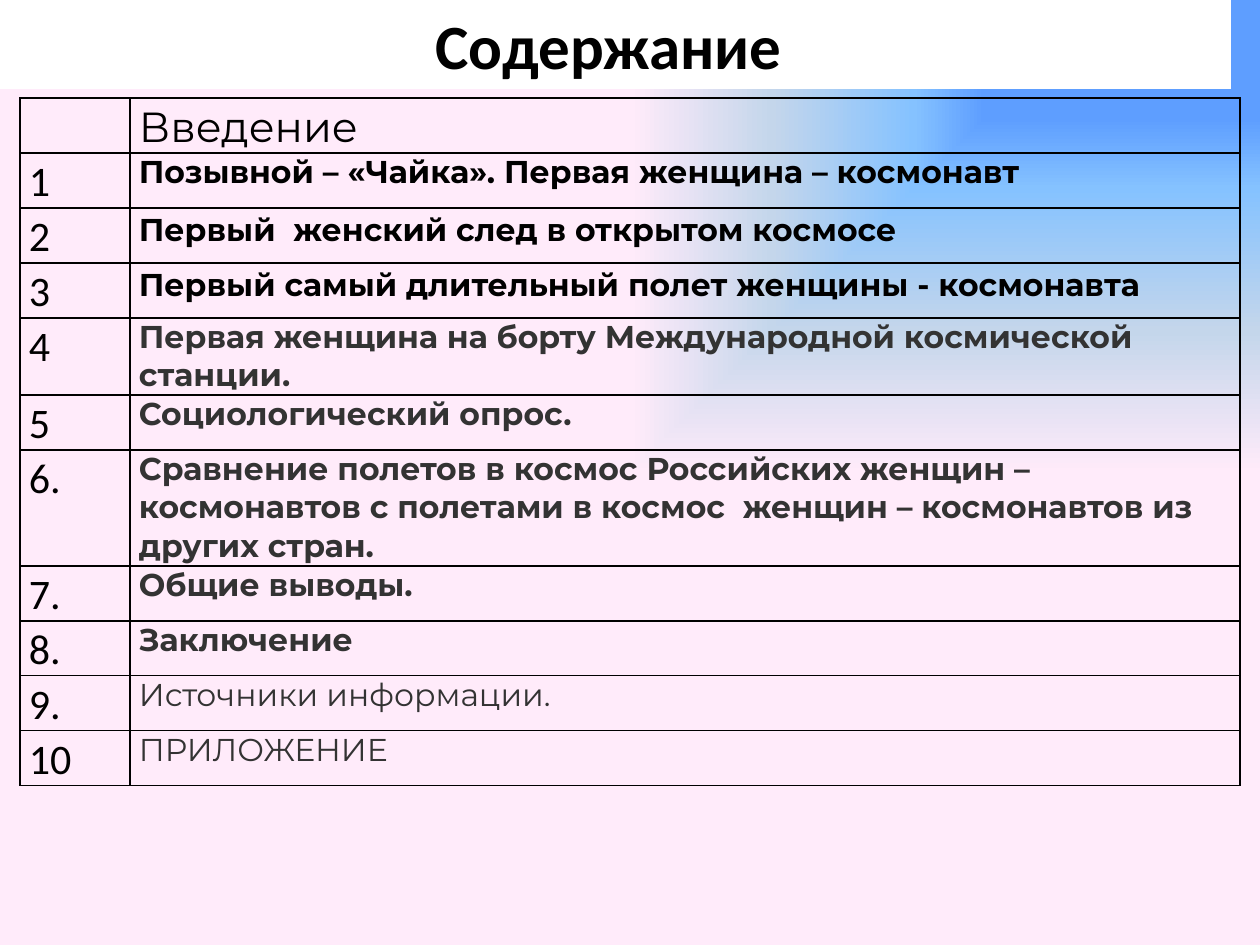
"""Build the contents slide: a white title band above a numbered table on a gradient."""
import lxml.etree
import pptx
import pptx.dml.color
import pptx.enum.shapes
import pptx.enum.text
import pptx.oxml
import pptx.oxml.ns
import pptx.util

COLORS = {
    "black": "000000",
    "white": "FFFFFF",
    "gray": "333333",
    "blue": "5E9EFF",
    "sky": "85C2FF",
    "mist": "C4D6EB",
    "pink": "FFEBFA",
}
GRADIENT = [(25, "blue", 16), (40, "sky", 100), (70, "mist", 100), (100, "pink", 100)]
ROW_HEIGHT = 55
CONTENTS = [
    ("", "Введение", 24, "black", False, 1.07, ROW_HEIGHT),
    ("1", "Позывной – «Чайка». Первая женщина – космонавт", 18, "black", True, None, ROW_HEIGHT),
    ("2", "Первый  женский след в открытом космосе", 18, "black", True, 1.07, ROW_HEIGHT),
    ("3", "Первый самый длительный полет женщины - космонавта", 18, "black", True, 1.07, ROW_HEIGHT),
    ("4", "Первая женщина на борту Международной космической станции.", 18, "gray", True, None, 77),
    ("5", "Социологический опрос.", 18, "gray", True, None, ROW_HEIGHT),
    ("6.", "Сравнение полетов в космос Российских женщин – космонавтов "
           "с полетами в космос  женщин – космонавтов из других стран.", 18, "gray", True, None, 116),
    ("7.", "Общие выводы.", 18, "gray", True, None, ROW_HEIGHT),
    ("8.", "Заключение", 18, "gray", True, None, ROW_HEIGHT),
    ("9.", "Источники информации.", 18, "gray", False, None, ROW_HEIGHT),
    ("10", "ПРИЛОЖЕНИЕ", 18, "gray", False, None, ROW_HEIGHT),
]


def px(length):
    """Turn pixels into EMU."""
    return pptx.util.Emu(round(length * 914400 / 126))


def rgb(name):
    """Return the named colour."""
    return pptx.dml.color.RGBColor.from_string(COLORS[name])


class SlideBuilder:
    """Hold the fonts and the current slide, and draw each kind of element."""

    heading_font = "Calibri"
    body_font = "Montserrat"

    def __init__(self, slide):
        self.slide = slide

    def background(self, stops):
        """Fill the slide with a gradient that spreads from the top right corner."""
        stop_xml = "".join(
            f'<a:gs pos="{position * 1000}"><a:srgbClr val="{COLORS[color]}">'
            f'<a:alpha val="{alpha * 1000}"/></a:srgbClr></a:gs>'
            for position, color, alpha in stops
        )
        background = pptx.oxml.parse_xml(
            f'<p:bg {pptx.oxml.ns.nsdecls("p", "a")}><p:bgPr><a:gradFill>'
            f'<a:gsLst>{stop_xml}</a:gsLst><a:path path="rect">'
            '<a:fillToRect l="100000" b="100000"/></a:path></a:gradFill>'
            '<a:effectLst/></p:bgPr></p:bg>'
        )
        self.slide.element.cSld.insert(0, background)

    def text(self, frame, text, font, size, color="black", bold=False, spacing=None):
        """Write one styled paragraph and return it."""
        paragraph = frame.paragraphs[0]
        paragraph.text = text
        paragraph.font.name = font
        paragraph.font.size = pptx.util.Pt(size)
        paragraph.font.bold = bold
        paragraph.font.color.rgb = rgb(color)
        if spacing:
            paragraph.line_spacing = spacing
        return paragraph

    def title(self, text, left, top, width, height):
        """Draw the title band."""
        shape = self.slide.shapes.add_shape(
            pptx.enum.shapes.MSO_SHAPE.RECTANGLE, px(left), px(top), px(width), px(height)
        )
        shape.shadow.inherit = False
        shape.fill.solid()
        shape.fill.fore_color.rgb = rgb("white")
        shape.line.fill.background()
        frame = shape.text_frame
        frame.word_wrap = True
        frame.vertical_anchor = pptx.enum.text.MSO_ANCHOR.MIDDLE
        paragraph = self.text(frame, text, self.heading_font, 36, bold=True)
        paragraph.alignment = pptx.enum.text.PP_ALIGN.CENTER

    def cell(self, cell, *style):
        """Write a transparent cell with thin black borders."""
        cell.margin_left = cell.margin_right = px(9)
        cell.margin_top = cell.margin_bottom = 0
        properties = cell._tc.get_or_add_tcPr()
        for side in ("lnL", "lnR", "lnT", "lnB"):
            border = lxml.etree.SubElement(properties, pptx.oxml.ns.qn(f"a:{side}"), w="12700")
            fill = lxml.etree.SubElement(border, pptx.oxml.ns.qn("a:solidFill"))
            lxml.etree.SubElement(fill, pptx.oxml.ns.qn("a:srgbClr"), val=COLORS["black"])
        cell.fill.background()
        self.text(cell.text_frame, *style)

    def table(self, rows, left, top, widths):
        """Draw the numbered table of contents."""
        height = sum(row[-1] for row in rows)
        table = self.slide.shapes.add_table(
            len(rows), len(widths), px(left), px(top), px(sum(widths)), px(height)
        ).table
        table.first_row = table.horz_banding = False
        for column, width in zip(table.columns, widths):
            column.width = px(width)
        for index, (number, entry, size, color, bold, spacing, row_height) in enumerate(rows):
            table.rows[index].height = px(row_height)
            self.cell(table.cell(index, 0), number, self.heading_font, 24, "black", False, 1.07)
            self.cell(table.cell(index, 1), entry, self.body_font, size, color, bold, spacing)


def main():
    """Build and save the presentation."""
    presentation = pptx.Presentation()
    presentation.slide_width, presentation.slide_height = px(1260), px(945)
    builder = SlideBuilder(presentation.slides.add_slide(presentation.slide_layouts[6]))
    builder.background(GRADIENT)
    builder.table(CONTENTS, 20, 98, (110, 1110))
    builder.title("Содержание ", 0, 0, 1231, 89)
    presentation.save("out.pptx")


if __name__ == "__main__":
    main()
